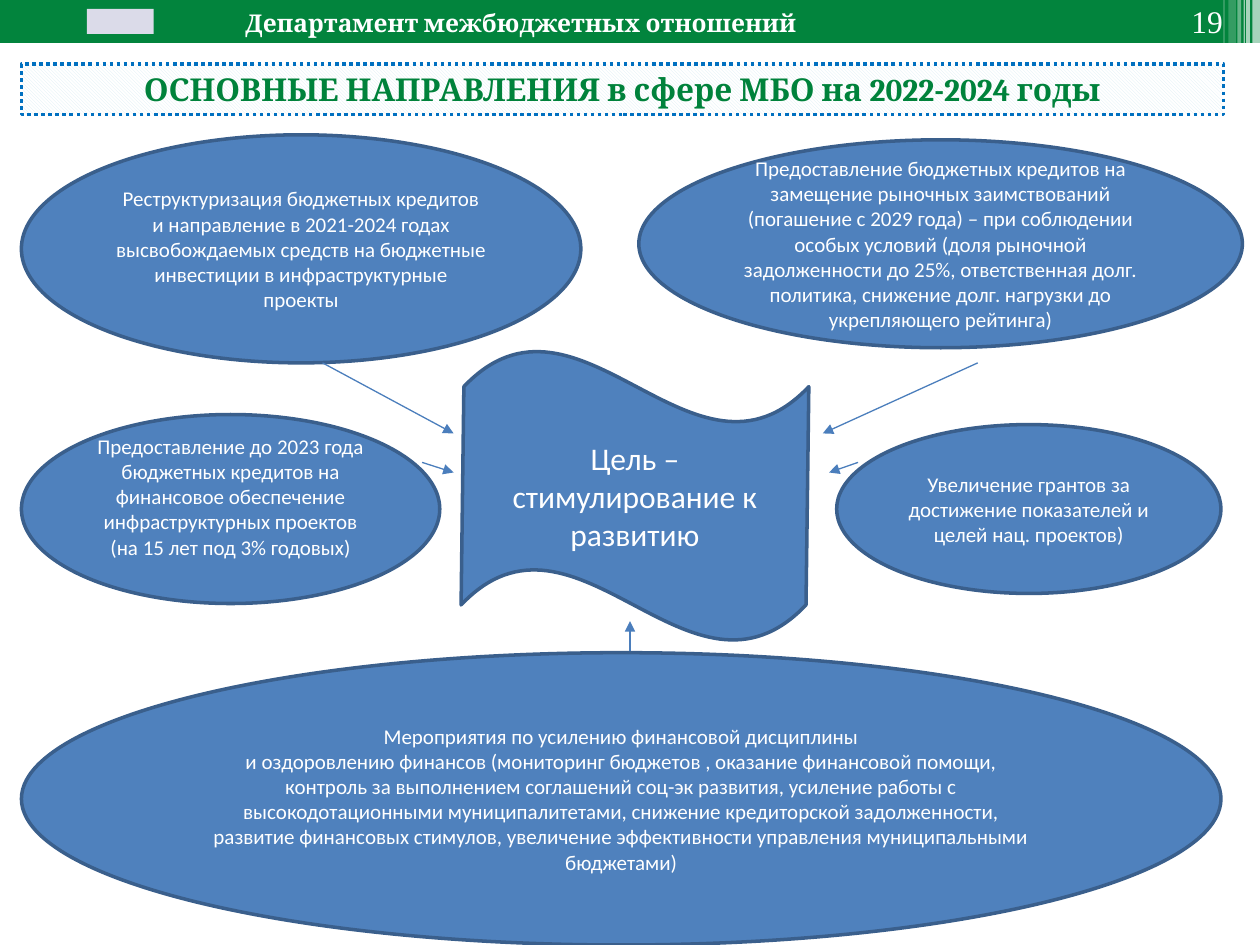
from pptx import Presentation
from pptx.dml.color import RGBColor
from pptx.enum.dml import MSO_LINE, MSO_PATTERN
from pptx.enum.shapes import MSO_CONNECTOR, MSO_SHAPE
from pptx.enum.text import MSO_ANCHOR, PP_ALIGN
from pptx.oxml.ns import qn
from pptx.util import Inches, Pt
from lxml.etree import SubElement

THEME = {
    "green": "02843D", "title": "00823B", "white": "FFFFFF", "logo": "DBDBE9",
    "blue": "4F81BD", "edge": "3A5F8C", "arrow": "4B7EBC",
    "dots": "0070C0", "hatch": "DBEEF4",
    "body": ("Calibri", 12), "goal": ("Calibri", 18),
    "head": ("Cambria", 14), "main": ("Cambria", 18),
    "page": ("Times New Roman", 18),
}

HEAD = "Департамент межбюджетных отношений"
TITLE = "ОСНОВНЫЕ НАПРАВЛЕНИЯ в сфере МБО на 2022-2024 годы"
PAGE = "19"
GOAL = "Цель – стимулирование к развитию"
STRIPES = [
    (9.94, 0.06, 65), (9.89, 0.03, 65), (9.87, 0.01, 60),
    (9.82, 0.03, 40), (9.75, 0.06, 20), (9.71, 0.01, 30),
]
OVALS = [
    ((0.17, 1.07, 4.44, 1.81), (0.1, 0.05), [
        "Реструктуризация бюджетных кредитов и направление в 2021-2024 годах "
        "высвобождаемых средств на бюджетные инвестиции в инфраструктурные проекты"]),
    ((5.07, 1.11, 4.79, 1.65), (0.1, 0.05), [
        "Предоставление бюджетных кредитов на замещение рыночных заимствований "
        "(погашение с 2029 года) – при соблюдении особых условий (доля рыночной "
        "задолженности до 25%, ответственная долг. политика, снижение долг. "
        "нагрузки до укрепляющего рейтинга)"]),
    ((0.17, 3.29, 3.32, 1.5), (0.1, 0.25), [
        "Предоставление до 2023 года бюджетных кредитов на финансовое обеспечение "
        "инфраструктурных проектов (на 15 лет под 3% годовых)"]),
    ((6.64, 3.37, 3.05, 1.34), (0.1, 0.05), [
        "Увеличение грантов за достижение показателей и целей нац. проектов)"]),
    ((0.17, 5.18, 9.52, 2.32), (0.12, 0.05), [
        "Мероприятия по усилению финансовой дисциплины",
        "и оздоровлению финансов (мониторинг бюджетов , оказание финансовой помощи, "
        "контроль за выполнением соглашений соц-эк развития, усиление работы с "
        "высокодотационными муниципалитетами, снижение кредиторской задолженности, "
        "развитие финансовых стимулов, увеличение эффективности управления "
        "муниципальными бюджетами)"]),
]
ARROWS = [
    (2.56, 2.88, 3.6, 3.44), (7.76, 2.88, 6.53, 3.44),
    (3.35, 3.67, 3.6, 3.75), (6.81, 3.67, 6.58, 3.75),
    (5, 5.17, 5, 4.93),
]


def tone(name):
    return RGBColor.from_string(THEME[name])


def add_form(slide, kind, box, fill, edge=None):
    form = slide.shapes.add_shape(kind, *map(Inches, box))
    form.shadow.inherit = False
    form.fill.solid()
    form.fill.fore_color.rgb = tone(fill)
    if edge:
        form.line.color.rgb = tone(edge)
        form.line.width = Pt(2)
    else:
        form.line.fill.background()
    return form


def write(form, lines, style, color="white", bold=None,
          align=PP_ALIGN.CENTER, anchor=MSO_ANCHOR.MIDDLE):
    frame = form.text_frame
    frame.word_wrap = True
    frame.vertical_anchor = anchor
    frame.text = "\n".join(lines)
    for para in frame.paragraphs:
        para.alignment = align
        font = para.font
        font.name, size = THEME[style]
        font.size = Pt(size)
        font.bold = bold
        font.color.rgb = tone(color)
    return frame


def add_text(slide, box, *args, **opts):
    return write(slide.shapes.add_textbox(*map(Inches, box)), *args, **opts)


def add_band(slide):
    add_form(slide, MSO_SHAPE.RECTANGLE, (0, 0, 10, 0.34), "green")
    for left, width, alpha in STRIPES:
        bar = add_form(slide, MSO_SHAPE.RECTANGLE, (left, 0, width, 0.34), "white")
        color = next(bar.fill._xPr.iter(qn("a:srgbClr")))
        SubElement(color, qn("a:alpha"), val=str(alpha * 1000))
    add_form(slide, MSO_SHAPE.RECTANGLE, (0.69, 0.07, 0.53, 0.2), "logo")
    frame = add_text(slide, (9.34, 0.02, 0.48, 0.3), [PAGE], "page",
                     anchor=MSO_ANCHOR.TOP)
    frame.margin_left = frame.margin_right = 0
    frame.margin_top = frame.margin_bottom = 0
    add_text(slide, (1.85, 0.01, 6.3, 0.34), [HEAD], "head", bold=True,
             align=PP_ALIGN.JUSTIFY)


def add_title(slide):
    form = add_form(slide, MSO_SHAPE.RECTANGLE, (0.17, 0.51, 9.54, 0.4),
                    "white", "dots")
    form.fill.patterned()
    form.fill.pattern = MSO_PATTERN.DARK_DOWNWARD_DIAGONAL
    form.fill.fore_color.rgb = tone("hatch")
    form.fill.back_color.rgb = tone("white")
    form.line.dash_style = MSO_LINE.ROUND_DOT
    write(form, [TITLE], "main", "title", True, anchor=MSO_ANCHOR.TOP)


def add_arrow(slide, ends):
    line = slide.shapes.add_connector(MSO_CONNECTOR.STRAIGHT, *map(Inches, ends))
    line.line.color.rgb = tone("arrow")
    line.line.width = Pt(0.75)
    SubElement(line.line._get_or_add_ln(), qn("a:tailEnd"), type="triangle")
    SubElement(line._element.spPr, qn("a:effectLst"))


def main():
    deck = Presentation()
    deck.slide_width, deck.slide_height = Inches(10), Inches(7.5)
    slide = deck.slides.add_slide(deck.slide_layouts[6])
    add_band(slide)
    add_title(slide)
    for box, (side, base), lines in OVALS:
        oval = add_form(slide, MSO_SHAPE.OVAL, box, "blue", "edge")
        frame = write(oval, lines, "body")
        frame.margin_left = frame.margin_right = Inches(side)
        frame.margin_bottom = Inches(base)
    goal = add_form(slide, MSO_SHAPE.WAVE, (3.66, 2.78, 2.76, 2.31), "blue", "edge")
    goal.adjustments[0], goal.adjustments[1] = 0.125, -0.004
    write(goal, [GOAL], "goal")
    for ends in ARROWS:
        add_arrow(slide, ends)
    deck.save("out.pptx")


if __name__ == "__main__":
    main()
